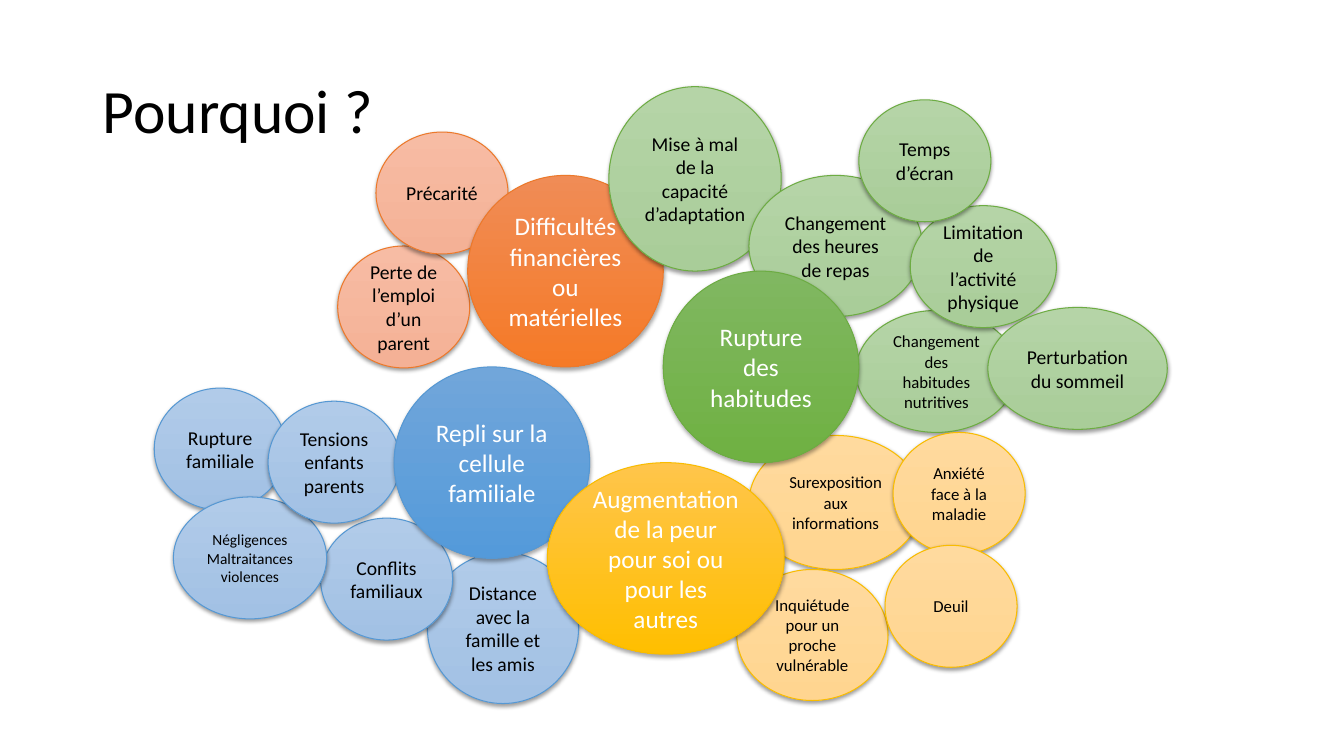
from dataclasses import dataclass

from lxml.etree import SubElement
from pptx import Presentation
from pptx.dml.color import RGBColor
from pptx.enum.shapes import MSO_SHAPE as Shape
from pptx.enum.text import MSO_ANCHOR as Anchor, MSO_AUTO_SIZE as AutoSize, PP_ALIGN as Align
from pptx.oxml.ns import qn
from pptx.util import Inches, Pt

# Grid: ten columns and ten rows to the inch
CELL = 0.1
COLS, ROWS = 133.33, 75
FONT = "Calibri"

BLACK = RGBColor(0x00, 0x00, 0x00)
WHITE = RGBColor(0xFF, 0xFF, 0xFF)


@dataclass(frozen=True)
class Tint:
    """Gradient from top to bottom."""
    top: RGBColor
    bottom: RGBColor


@dataclass(frozen=True)
class Family:
    """Colours shared by a main cause and its consequences."""
    line: RGBColor
    main: Tint
    pale: Tint


@dataclass(frozen=True)
class Bubble:
    """Ellipse placed in grid columns and rows."""
    text: str
    family: Family
    col: float
    row: float
    width: float = 13.1
    height: float = 12.1
    size: int = 14
    main: bool = False


BLUE = Family(RGBColor(0x56, 0x98, 0xD3),
              Tint(RGBColor(0x71, 0xA6, 0xDA), RGBColor(0x54, 0x9A, 0xDA)),
              Tint(RGBColor(0xB1, 0xCB, 0xE9), RGBColor(0xA2, 0xC1, 0xE4)))
ORANGE = Family(RGBColor(0xEC, 0x79, 0x2B),
                Tint(RGBColor(0xF0, 0x8C, 0x56), RGBColor(0xF5, 0x7A, 0x27)),
                Tint(RGBColor(0xF7, 0xBC, 0xA4), RGBColor(0xF4, 0xB1, 0x96)))
GREEN = Family(RGBColor(0x6D, 0xAC, 0x43),
               Tint(RGBColor(0x80, 0xB7, 0x61), RGBColor(0x6F, 0xB1, 0x42)),
               Tint(RGBColor(0xB5, 0xD4, 0xA7), RGBColor(0xA9, 0xCD, 0x99)))
YELLOW = Family(RGBColor(0xF9, 0xBC, 0x00),
                Tint(RGBColor(0xFF, 0xC5, 0x4B), RGBColor(0xFF, 0xBF, 0x00)),
                Tint(RGBColor(0xFF, 0xDA, 0x9E), RGBColor(0xFF, 0xD5, 0x90)))


def main_cause(text: str, family: Family, col: float, row: float, width: float = 19.4) -> Bubble:
    return Bubble(text, family, col, row, width, 19, 18, True)


# Bubbles from back to front
BUBBLES = [
    Bubble("Distance avec la famille et les amis", BLUE, 42.4, 54.8, 15, 15),
    Bubble("Conflits familiaux", BLUE, 31.8, 51.4),
    Bubble("Rupture familiale", BLUE, 15.3, 38.5),
    Bubble("Négligences\nMaltraitances\nviolences", BLUE, 17.2, 49.3, 15.2, size=11),
    Bubble("Tensions enfants parents", BLUE, 26.6, 39.8),
    Bubble("Perte de l’emploi d’un parent", ORANGE, 33.5, 24.4),
    Bubble("Précarité", ORANGE, 37.3, 13.1),
    main_cause("Difficultés financières ou matérielles", ORANGE, 46.4, 17.4),
    main_cause("Repli sur la cellule familiale", BLUE, 39.1, 36.4),
    Bubble("Mise à mal de la capacité d’adaptation", GREEN, 60.4, 8.6, 17.1, 18.3),
    Bubble("Changement des heures de repas", GREEN, 74.3, 17.4, 17.2, 14),
    Bubble("Changement des habitudes nutritives", GREEN, 84.9, 30.8, 16, size=12),
    Bubble("Limitation de l’activité physique", GREEN, 90.3, 20.4, 14.5),
    Bubble("Temps d’écran", GREEN, 85.2, 9.9),
    Bubble("Perturbation du sommeil", GREEN, 98, 30.5, 17.8),
    Bubble("Surexposition aux informations", YELLOW, 74.3, 43.2, 17.2, 13.3, 12),
    Bubble("Anxiété face à la maladie", YELLOW, 88.6, 42.9, size=12),
    Bubble("Inquiétude pour un proche vulnérable", YELLOW, 73.1, 56.5, 15, 13, 12),
    Bubble("Deuil", YELLOW, 87.8, 54.1, size=12),
    main_cause("Augmentation de la peur pour soi ou pour les autres", YELLOW, 54.3, 45.9, 23.5),
    main_cause("Rupture des habitudes", GREEN, 65.8, 26.9),
]


def cells(n: float) -> int:
    return Inches(n * CELL)


def apply(target, formats: dict) -> None:
    for name, value in formats.items():
        setattr(target, name, value)


def place(sp, col: float, row: float, width: float, height: float) -> None:
    apply(sp, {"left": cells(col), "top": cells(row),
               "width": cells(width), "height": cells(height)})


def write(tf, text: str, size: int, color: RGBColor, **paragraph) -> None:
    tf.text = text
    apply(tf, {"word_wrap": True, "auto_size": AutoSize.NONE,
               "vertical_anchor": Anchor.MIDDLE})
    for p in tf.paragraphs:
        apply(p, paragraph)
        for r in p.runs:
            apply(r.font, {"name": FONT, "size": Pt(size)})
            r.font.color.rgb = color


def add_shadow(sp, distance: float, opacity: int) -> None:
    sp.shadow.inherit = False
    effects = sp._element.spPr.find(qn("a:effectLst"))
    shadow = SubElement(effects, qn("a:outerShdw"), blurRad=str(Pt(3.1)),
                        dist=str(Pt(distance)), dir="5400000", rotWithShape="0")
    color = SubElement(shadow, qn("a:srgbClr"), val=str(BLACK))
    SubElement(color, qn("a:alpha"), val=str(opacity * 1000))


def add_bubble(slide, b: Bubble) -> None:
    sp = slide.shapes.add_shape(Shape.OVAL, 0, 0, 0, 0)
    place(sp, b.col, b.row, b.width, b.height)
    tint = b.family.main if b.main else b.family.pale
    sp.fill.gradient()
    sp.fill.gradient_angle = 270
    for stop, color, position in zip(sp.fill.gradient_stops, (tint.top, tint.bottom), (0, 1)):
        stop.color.rgb = color
        stop.position = position
    sp.line.color.rgb = b.family.line
    sp.line.width = Pt(0.75)
    add_shadow(sp, *((1.8, 35) if b.main else (1.6, 38)))
    write(sp.text_frame, b.text, b.size, WHITE if b.main else BLACK, alignment=Align.CENTER)


def main() -> None:
    prs = Presentation()
    apply(prs, {"slide_width": cells(COLS), "slide_height": cells(ROWS)})
    slide = prs.slides.add_slide(prs.slide_layouts[5])

    # Title
    title = slide.shapes.title
    place(title, 9.2, 4, 115, 14.5)
    write(title.text_frame, "Pourquoi ?", 44, BLACK, alignment=Align.LEFT, line_spacing=0.9)

    # Causes and consequences
    for b in BUBBLES:
        add_bubble(slide, b)

    prs.save("out.pptx")


if __name__ == "__main__":
    main()
